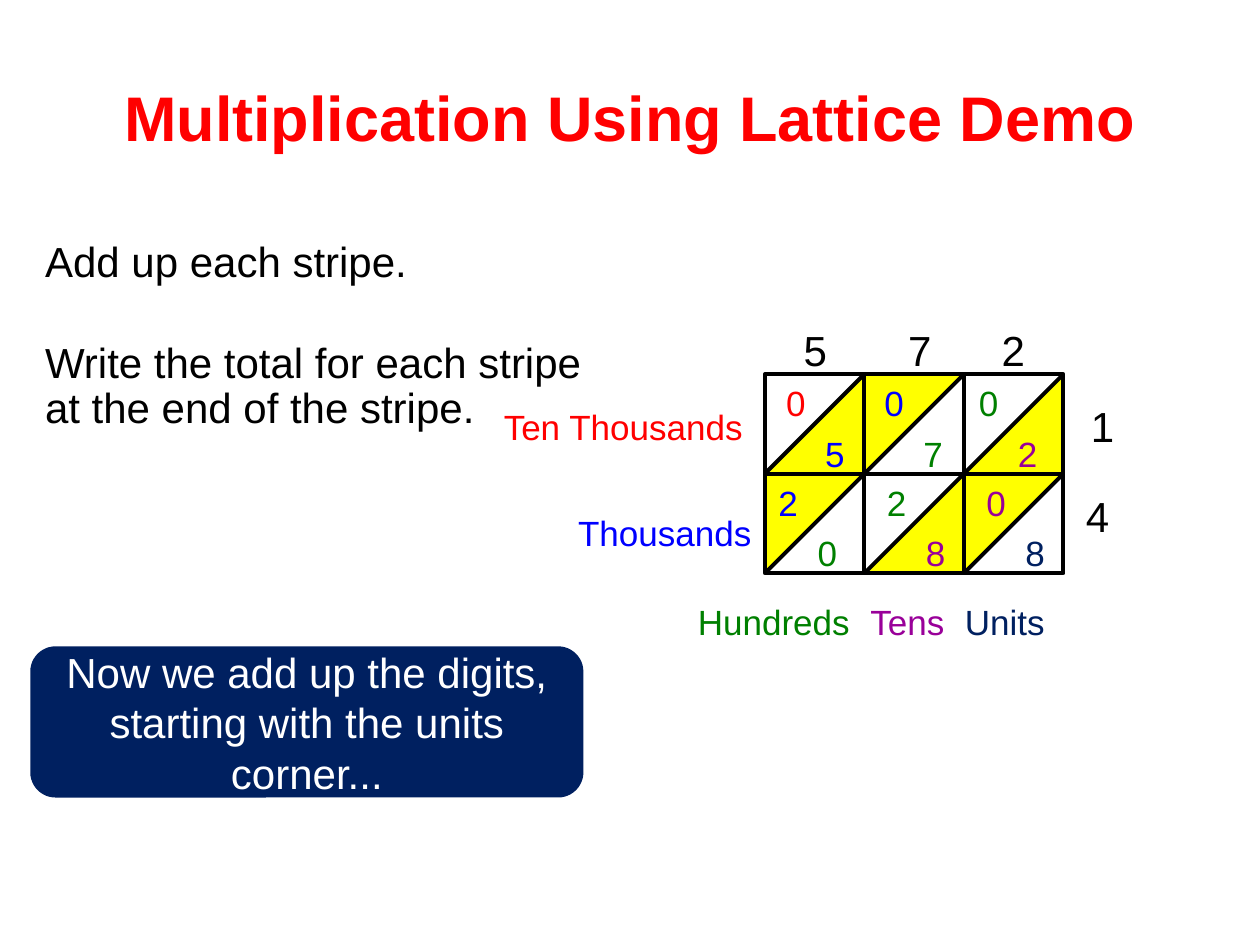
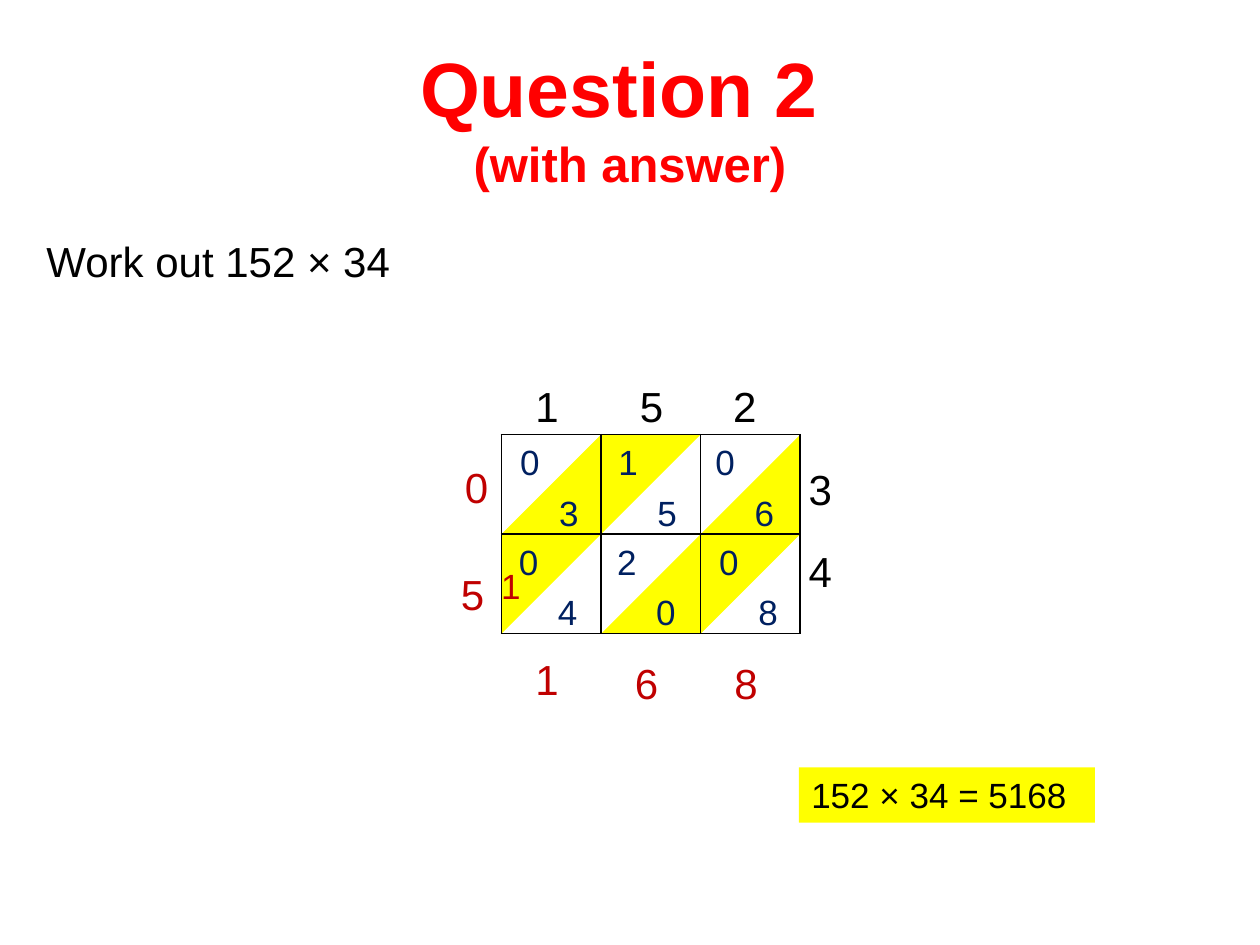
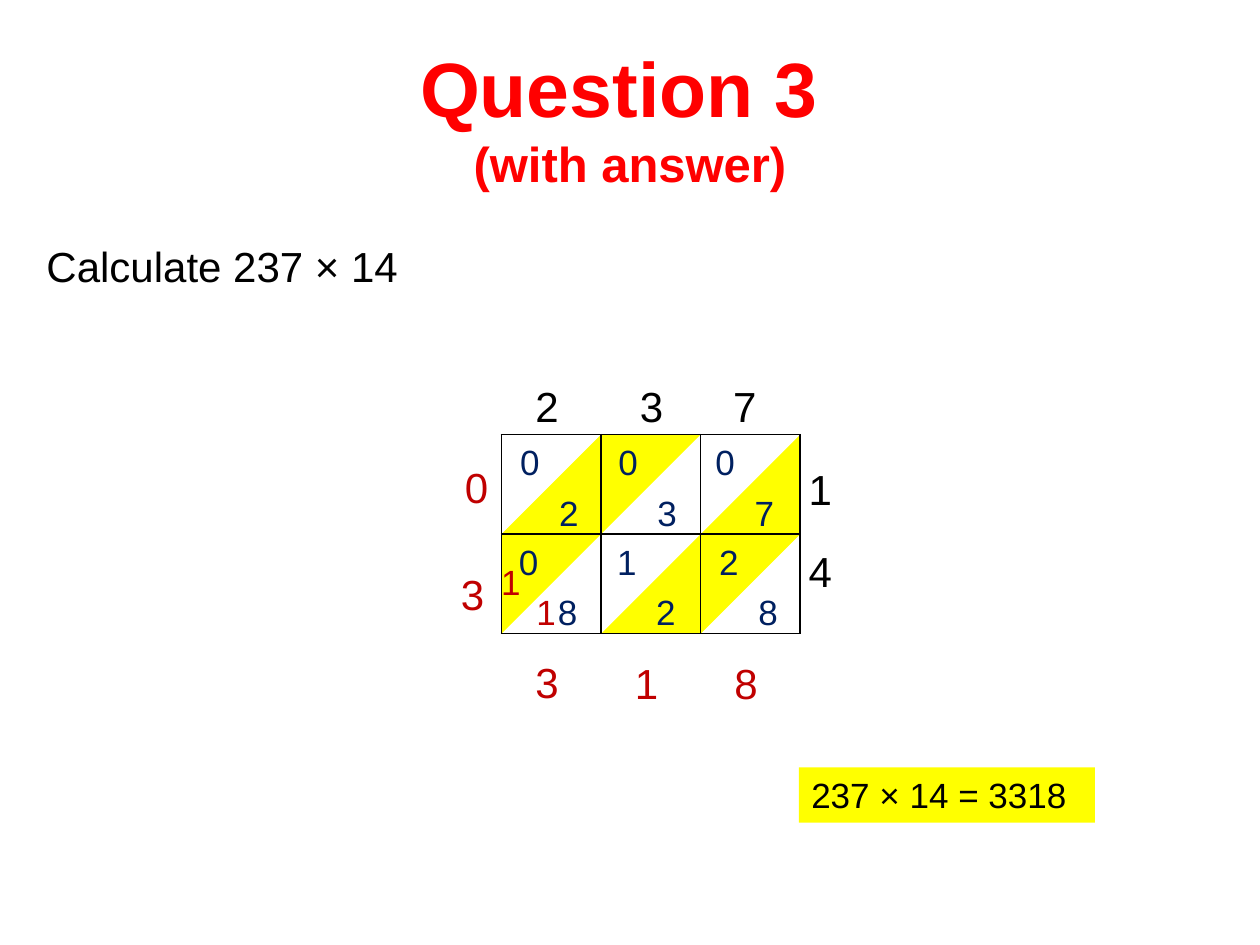
from itertools import product

from lxml.etree import SubElement
from pptx import Presentation
from pptx.dml.color import RGBColor
from pptx.enum.shapes import MSO_CONNECTOR, MSO_SHAPE
from pptx.enum.text import MSO_ANCHOR, MSO_AUTO_SIZE, PP_ALIGN
from pptx.oxml.ns import qn
from pptx.util import Inches, Pt

BLACK = RGBColor(0, 0, 0)
WHITE = RGBColor(255, 255, 255)
RED = RGBColor(255, 0, 0)
BLUE = RGBColor(0, 0, 255)
GREEN = RGBColor(0, 0x80, 0)
PURPLE = RGBColor(0x99, 0, 0x99)
NAVY = RGBColor(0, 0x20, 0x60)
CRIMSON = RGBColor(0xC0, 0, 0)
YELLOW = RGBColor(255, 255, 0)

FONT = "Arial"
CELL = 0.79
COLS, ROWS = 3, 2

# Lattice corners as (column, row) in cells
STRIPES = [
    [(0, 2), (0, 1), (1, 0), (2, 0)],
    [(1, 2), (2, 2), (3, 1), (3, 0)],
]
CUTS = [((0, 1), (1, 0)), ((0, 2), (2, 0)), ((1, 2), (3, 0)), ((2, 2), (3, 1))]


class Deck:
    def __init__(self):
        self.prs = Presentation()
        self.prs.slide_width = Inches(10)
        self.prs.slide_height = Inches(7.5)
        self.slide = None

    def start(self, title, left, width, sizes):
        """Add a slide; each line of the title has its own size."""
        self.slide = self.prs.slides.add_slide(self.prs.slide_layouts[5])
        head = self.slide.shapes.title
        head.left, head.top = Inches(left), Inches(0.3)
        head.width, head.height = Inches(width), Inches(1.25)
        frame = head.text_frame
        frame.text = title
        frame.auto_size = MSO_AUTO_SIZE.NONE
        frame.vertical_anchor = MSO_ANCHOR.MIDDLE
        par = frame.paragraphs[0]
        par.alignment = PP_ALIGN.CENTER
        for run, size in zip(par.runs, sizes):
            self.style(run.font, size, RED)
            run.font.bold = True

    def style(self, font, size, color):
        font.name = FONT
        font.size = Pt(size)
        font.color.rgb = color

    def label(self, frame, text, size, colors):
        """Fill a frame, one paragraph a line, one colour a paragraph."""
        frame.text = text
        frame.word_wrap = True
        for par, color in zip(frame.paragraphs, colors):
            for run in par.runs:
                self.style(run.font, size, color)
        return frame.paragraphs

    def text(self, text, left, top, width=0.39, height=0.5, size=24, colors=(BLACK,)):
        box = self.slide.shapes.add_textbox(
            Inches(left), Inches(top), Inches(width), Inches(height))
        return self.label(box.text_frame, text, size, colors)

    def heads(self, digits, left, top):
        """Place the top factor, its digits set apart by tab stops."""
        par = self.text("\t".join(digits), left, top, 2.31)[0]
        tabs = SubElement(par._p.get_or_add_pPr(), qn("a:tabLst"))
        for stop in (0.83, 1.57):
            SubElement(tabs, qn("a:tab"), pos=str(Inches(stop)), algn="l")

    def cells(self, pairs, left, top, nudges, shades):
        """Place tens above units in each cell of the lattice."""
        spots = product(range(ROWS), range(COLS))
        for (row, col), pair, nudge, shade in zip(spots, pairs, nudges, shades):
            pars = self.text("\n".join(pair), left + col * CELL + nudge,
                             top + row * CELL, 0.71, 0.84, 20, shade)
            pars[1].space_before = Pt(4.8)
            pars[1]._p.get_or_add_pPr().set("marL", str(Inches(0.31)))

    def panel(self, kind, left, top, width, height, fill=None, line=None):
        shape = self.slide.shapes.add_shape(
            kind, Inches(left), Inches(top), Inches(width), Inches(height))
        self.paint(shape, fill)
        if line:
            shape.line.color.rgb = BLACK
            shape.line.width = Pt(line)
        return shape

    def paint(self, shape, fill):
        shape.shadow.inherit = False
        shape.line.fill.background()
        if fill is None:
            shape.fill.background()
        else:
            shape.fill.solid()
            shape.fill.fore_color.rgb = fill

    def stripes(self, left, top):
        for stripe in STRIPES:
            pts = [(Inches(left + x * CELL), Inches(top + y * CELL)) for x, y in stripe]
            form = self.slide.shapes.build_freeform(*pts[0])
            form.add_line_segments(pts[1:], close=True)
            self.paint(form.convert_to_shape(), YELLOW)

    def line(self, x1, y1, x2, y2, width):
        link = self.slide.shapes.add_connector(
            MSO_CONNECTOR.STRAIGHT, Inches(x1), Inches(y1), Inches(x2), Inches(y2))
        link.line.color.rgb = BLACK
        link.line.width = Pt(width)
        SubElement(link._element.spPr, qn("a:effectLst"))

    def grid(self, left, top):
        """Add a table whose inner cells alone have borders."""
        rows, cols = ROWS + 2, COLS + 2
        frame = self.slide.shapes.add_table(
            rows, cols, Inches(left - CELL), Inches(top - CELL),
            Inches(cols * CELL), Inches(rows * CELL))
        table = frame.table
        table.first_row = table.horz_banding = False
        for item in table.columns:
            item.width = Inches(CELL)
        for item in table.rows:
            item.height = Inches(CELL)

        def inner(row, col):
            return 1 <= row <= ROWS and 1 <= col <= COLS

        sides = {"a:lnL": (0, -1), "a:lnR": (0, 1), "a:lnT": (-1, 0), "a:lnB": (1, 0)}
        for row, col in product(range(rows), range(cols)):
            cell = table.cell(row, col)
            props = cell._tc.get_or_add_tcPr()
            for tag, (down, right) in sides.items():
                edge = SubElement(props, qn(tag), w=str(Pt(1)))
                if inner(row, col) or inner(row + down, col + right):
                    fill = SubElement(edge, qn("a:solidFill"))
                    SubElement(fill, qn("a:srgbClr"), val=str(BLACK))
                else:
                    SubElement(edge, qn("a:noFill"))
            cell.fill.background()


def demo(deck):
    left, top = 6.07, 2.97
    deck.start("Multiplication Using Lattice Demo", 0.47, 9.06, [36])
    deck.stripes(left, top)

    # Instructions
    pars = deck.text(
        "Add up each stripe.\nWrite the total for each stripe \vat the end of the stripe.",
        0.26, 1.82, 9.47, 1.7, colors=(BLACK, BLACK))
    pars[1].line_spacing = 0.9
    pars[1].space_before = Pt(32)

    # Lattice
    for row, col in product(range(ROWS), range(COLS)):
        deck.panel(MSO_SHAPE.RECTANGLE, left + col * CELL, top + row * CELL,
                   CELL, CELL, line=2.25)
    for (x1, y1), (x2, y2) in CUTS:
        deck.line(left + x1 * CELL, top + y1 * CELL,
                  left + x2 * CELL, top + y2 * CELL, 2.25)
    deck.heads("572", 6.28, 2.53)
    deck.text("1", 8.56, 3.13)
    deck.text("4", 8.52, 3.84)
    shades = [(RED, BLUE), (BLUE, GREEN), (GREEN, PURPLE),
              (BLUE, GREEN), (GREEN, PURPLE), (PURPLE, NAVY)]
    deck.cells(["05", "07", "02", "20", "28", "08"], left, 2.98,
               [0.07, 0.06, 0.02, 0.01, 0.08, 0.08], shades)

    # Place names
    for name, x, y, color in [
        ("Ten Thousands", 3.9, 3.17, RED),
        ("Thousands", 4.49, 4.01, BLUE),
        ("Units", 7.56, 4.72, NAVY),
        ("Hundreds", 5.44, 4.72, GREEN),
        ("Tens", 6.81, 4.72, PURPLE),
    ]:
        deck.text(name, x, y, 2.2, 0.44, 20, (color,))

    # Next step
    note = deck.panel(MSO_SHAPE.ROUNDED_RECTANGLE, 0.24, 5.13, 4.39, 1.2, NAVY)
    note.text_frame.vertical_anchor = MSO_ANCHOR.MIDDLE
    pars = deck.label(note.text_frame,
                      "Now we add up the digits, starting with the units corner...",
                      24, (WHITE,))
    pars[0].alignment = PP_ALIGN.CENTER


def answer(deck, number, task, task_top, factors, pairs, sums, low, carries, result):
    left, top = 3.98, 3.45
    deck.start(f"Question {number} \v(with answer)", 0.5, 9, [44, 28])
    deck.stripes(left, top)
    deck.text(task, 0.27, task_top, 9.45)

    # Lattice
    deck.grid(left, top)
    across, down = factors
    deck.heads(across, 4.15, 2.97)
    pars = deck.text("\n".join(down), 6.32, 3.63, 0.39, 1.16, colors=(BLACK, BLACK))
    pars[1].space_before = Pt(18)
    deck.cells(pairs, left, top, [0.05, 0.04, 0.02, 0.04, 0.03, 0.05],
               [(NAVY, NAVY)] * len(pairs))

    # Stripe totals and carried digits
    spots = [(3.59, 3.61), (3.56, 4.46), (4.15, low), (4.94, 5.17), (5.73, 5.17)]
    for digit, (x, y) in zip(sums, spots):
        deck.text(digit, x, y, colors=(CRIMSON,))
    for x, y in carries:
        deck.text("1", x, y, 0.36, 0.44, 20, (CRIMSON,))

    # Result
    box = deck.panel(MSO_SHAPE.RECTANGLE, 6.34, 6.09, 2.35, 0.44, YELLOW)
    box.text_frame.vertical_anchor = MSO_ANCHOR.TOP
    pars = deck.label(box.text_frame, result, 20, (BLACK,))
    pars[0].alignment = PP_ALIGN.LEFT


def main():
    deck = Deck()
    demo(deck)
    answer(deck, 2, "Work out 152 × 34", 1.82, ("152", "34"),
           ["03", "15", "06", "04", "20", "08"], "05168", 5.14,
           [(3.88, 4.43)], "152 × 34 = 5168")
    answer(deck, 3, "Calculate 237 × 14", 1.86, ("237", "14"),
           ["02", "03", "07", "08", "12", "28"], "03318", 5.16,
           [(4.16, 4.64), (3.88, 4.4)], "237 × 14 = 3318")
    deck.prs.save("out.pptx")


if __name__ == "__main__":
    main()
